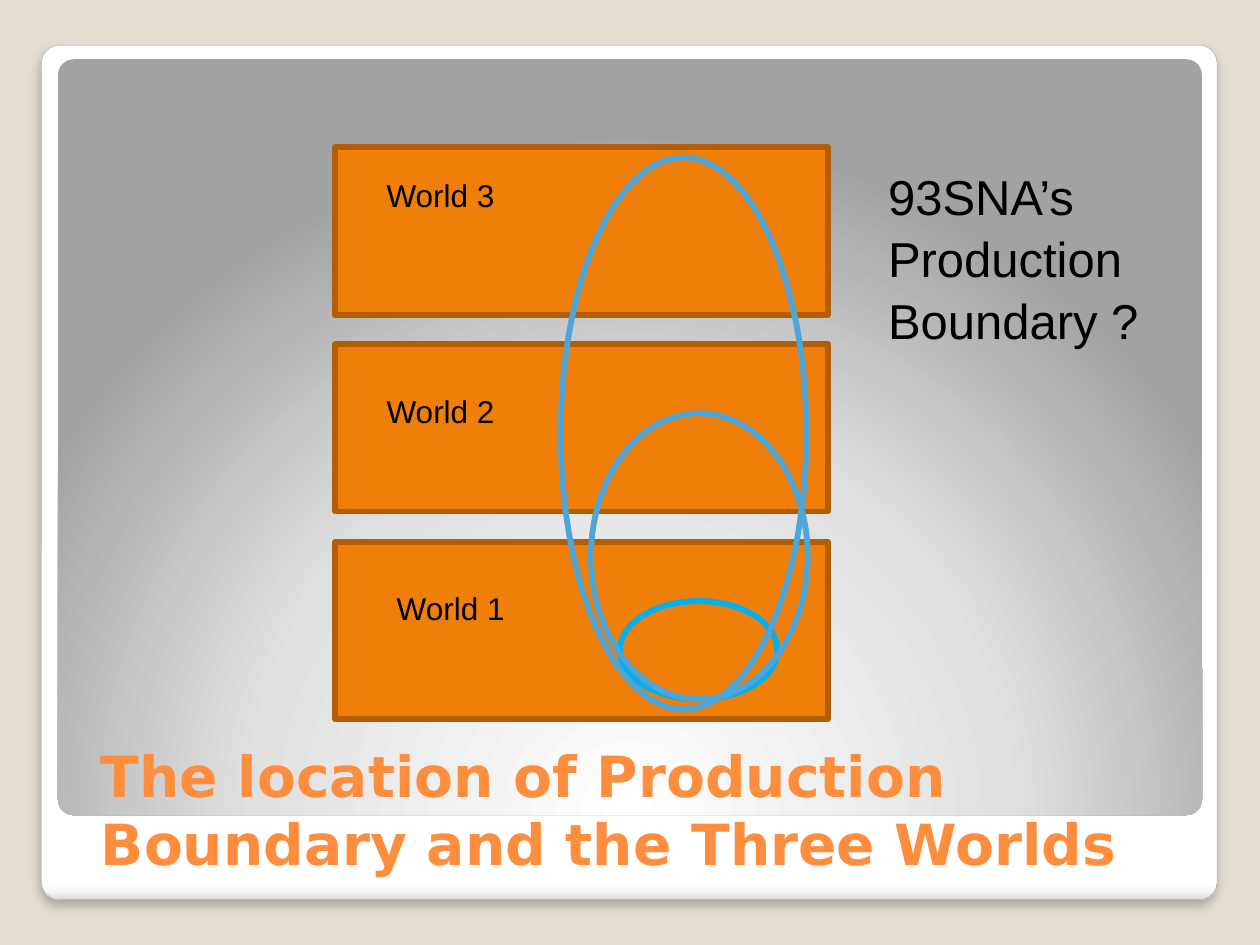
"""Build the slide on the production boundary and the three worlds."""
from dataclasses import dataclass

from lxml import etree
from pptx import Presentation
from pptx import util as u
from pptx.dml.color import RGBColor
from pptx.enum import shapes, text
from pptx.oxml import parse_xml
from pptx.oxml.ns import nsdecls, qn


@dataclass(frozen=True)
class Theme:
    """Colours, fonts and sizes of the slide."""
    background: str = "E3DED1"
    frame_line: str = "A4A4A4"
    world: str = "F07F09"
    world_line: str = "B25E07"
    boundary: str = "4EA5D8"
    inner_boundary: str = "00B0F0"
    title: str = "FF8D3E"
    ink: str = "000000"
    title_font: str = "DejaVu Sans"
    body_font: str = "Arial"
    title_size: float = 32.4
    note_size: float = 28
    label_size: float = 18
    outline: float = 3.35


THEME = Theme()
FRAME_STOPS = ((0, "FFFFFF"), (98, "FFFFFF"), (99, "F7F7F7"), (100, "DADADA"))
PANEL_STOPS = ((0, "FFFFFF"), (55, "E1E1E1"), (100, "A2A2A2"))
DOWNWARD = '<a:lin ang="5400000" scaled="0"/>'
RADIAL = ('<a:path path="circle"><a:fillToRect l="50000" t="175000" '
          'r="50000" b="-75000"/></a:path>')


def colour(value):
    """Return the colour object for a hex value."""
    return RGBColor.from_string(value)


def place(item, left, top, width, height):
    """Set position and size in inches."""
    item.left, item.top = u.Inches(left), u.Inches(top)
    item.width, item.height = u.Inches(width), u.Inches(height)


def add_plain_shape(slide, kind, bounds, fill=None, line=None, weight=THEME.outline):
    """Add a shape with an optional solid fill and outline."""
    shape = slide.shapes.add_shape(kind, *map(u.Inches, bounds))
    shape.shadow.inherit = False
    if fill:
        shape.fill.solid()
        shape.fill.fore_color.rgb = colour(fill)
    else:
        shape.fill.background()
    if line:
        shape.line.color.rgb = colour(line)
        shape.line.width = u.Pt(weight)
    else:
        shape.line.fill.background()
    return shape


def add_gradient_panel(slide, bounds, stops, direction, line=None):
    """Add a rounded panel with a gradient fill."""
    panel = add_plain_shape(slide, shapes.MSO_SHAPE.ROUNDED_RECTANGLE, bounds,
                            line=line, weight=0.16)
    panel.adjustments[0] = 0.021
    marks = "".join(f'<a:gs pos="{at * 1000}"><a:srgbClr val="{value}"/></a:gs>'
                    for at, value in stops)
    gradient = parse_xml(f'<a:gradFill {nsdecls("a")} rotWithShape="1">'
                         f'<a:gsLst>{marks}</a:gsLst>{direction}</a:gradFill>')
    properties = panel._element.spPr
    properties.replace(properties.find(qn("a:noFill")), gradient)
    return panel


def add_soft_shadow(shape):
    """Give a shape a faint shadow below it."""
    effects = shape._element.spPr.find(qn("a:effectLst"))
    shadow = etree.SubElement(effects, qn("a:outerShdw"), blurRad=str(u.Pt(6)),
                              dist=str(u.Pt(4)), dir="5400000", algn="tl", rotWithShape="0")
    tint = etree.SubElement(shadow, qn("a:srgbClr"), val=THEME.ink)
    etree.SubElement(tint, qn("a:alpha"), val="25000")


def style_text(para, font, size, value, bold=False):
    """Set the font of a paragraph."""
    para.alignment = text.PP_ALIGN.LEFT
    para.font.name, para.font.size, para.font.bold = font, u.Pt(size), bold
    para.font.color.rgb = colour(value)


def add_text(slide, words, bounds, size):
    """Add a wrapped text box in the body font."""
    box = slide.shapes.add_textbox(*map(u.Inches, bounds))
    box.text_frame.word_wrap = True
    para = box.text_frame.paragraphs[0]
    para.text = words
    para.line_spacing = 1.05
    style_text(para, THEME.body_font, size, THEME.ink)


def set_title(slide, words):
    """Place the title in front of the panels."""
    title = slide.shapes.title
    place(title, 0.7, 5.86, 8.95, 1.15)
    frame = title.text_frame
    frame.text = words
    frame.word_wrap = True
    frame.auto_size = text.MSO_AUTO_SIZE.NONE
    frame.vertical_anchor = text.MSO_ANCHOR.BOTTOM
    style_text(frame.paragraphs[0], THEME.title_font, THEME.title_size, THEME.title, True)
    slide.shapes._spTree.append(title._element)


def main():
    """Build and save the slide."""
    deck = Presentation()
    deck.slide_width, deck.slide_height = u.Inches(10), u.Inches(7.5)
    slide = deck.slides.add_slide(deck.slide_layouts[5])
    slide.background.fill.solid()
    slide.background.fill.fore_color.rgb = colour(THEME.background)

    frame = add_gradient_panel(slide, (0.33, 0.36, 9.33, 6.78), FRAME_STOPS,
                               DOWNWARD, THEME.frame_line)
    add_soft_shadow(frame)
    add_gradient_panel(slide, (0.46, 0.47, 9.08, 6), PANEL_STOPS, RADIAL)

    for top, height in ((4.3, 1.41), (2.73, 1.33), (1.17, 1.33)):
        add_plain_shape(slide, shapes.MSO_SHAPE.RECTANGLE, (2.66, top, 3.91, height),
                        THEME.world, THEME.world_line)
    for words, bounds in (("World 3", (2.97, 1.33, 1.8, 0.4)),
                          ("World 2", (2.97, 3.05, 1.25, 0.4)),
                          ("World 1", (3.05, 4.61, 1.41, 0.71))):
        add_text(slide, words, bounds, THEME.label_size)
    for bounds, line in (((4.92, 4.77, 1.25, 0.78), THEME.inner_boundary),
                         ((4.69, 3.28, 1.72, 2.27), THEME.boundary),
                         ((4.45, 1.25, 1.95, 4.38), THEME.boundary)):
        add_plain_shape(slide, shapes.MSO_SHAPE.OVAL, bounds, line=line)

    set_title(slide, "The location of Production Boundary and the Three Worlds")
    add_text(slide, "93SNA’s Production Boundary ?", (6.95, 1.25, 2.34, 1.51),
             THEME.note_size)
    deck.save("out.pptx")


if __name__ == "__main__":
    main()
